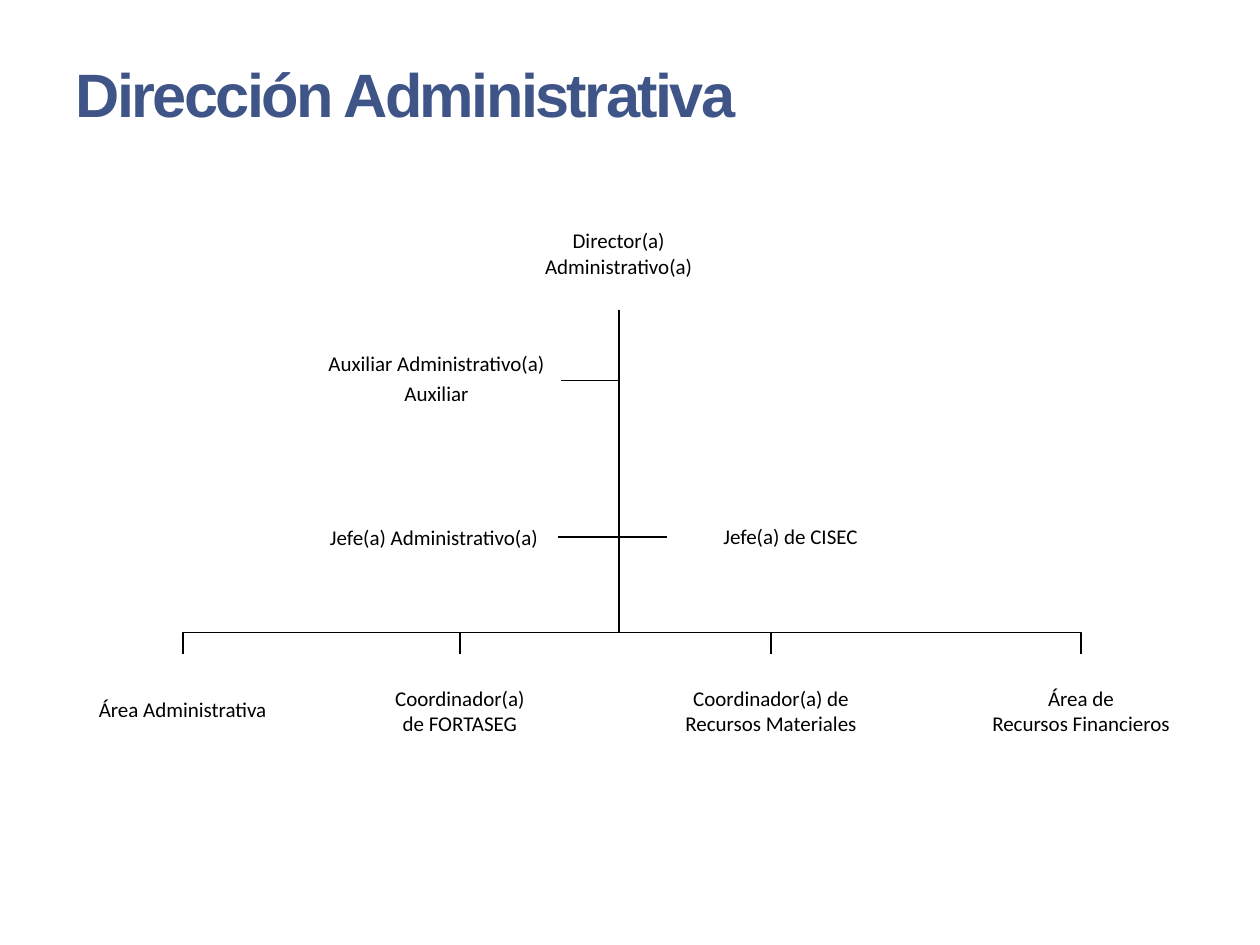
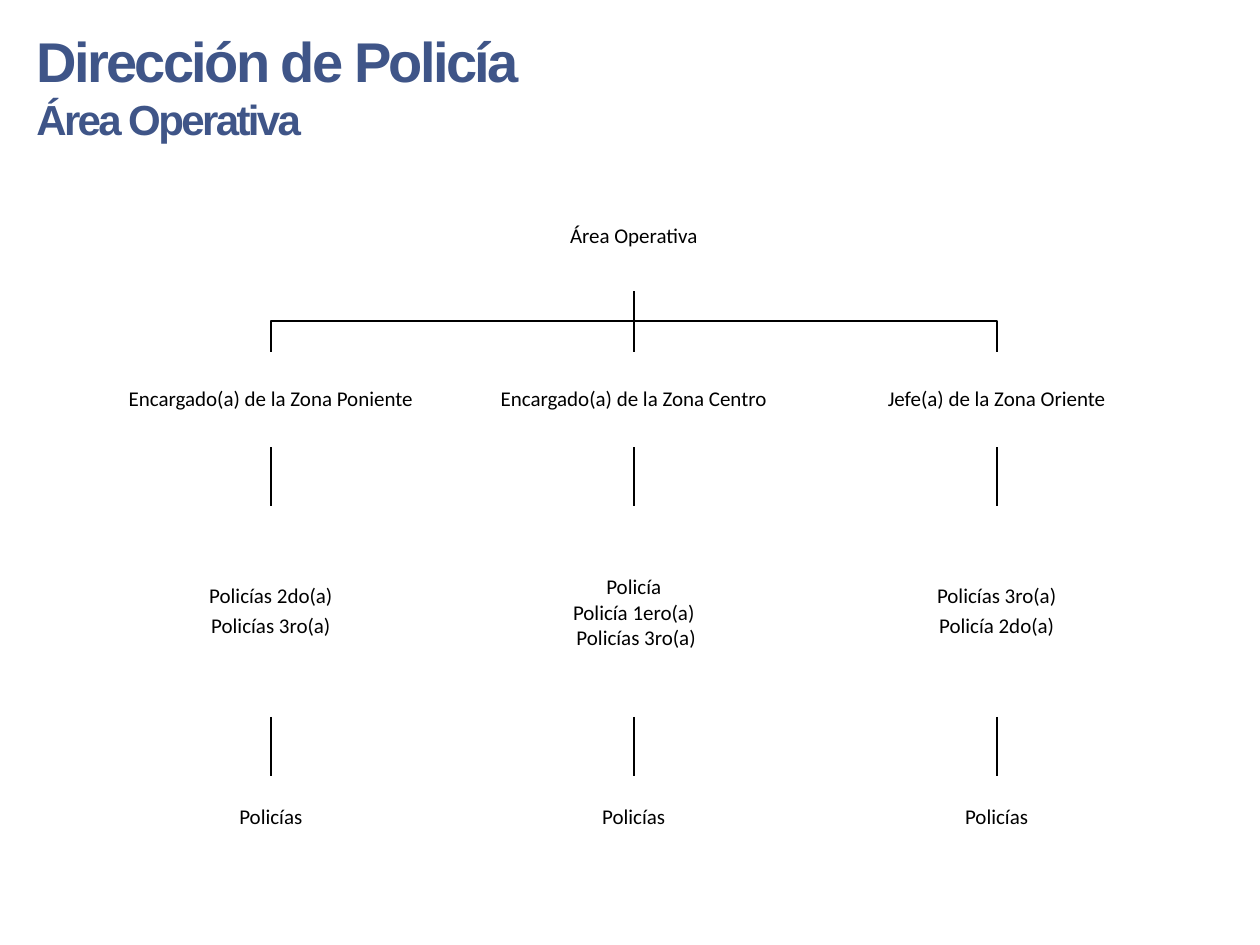
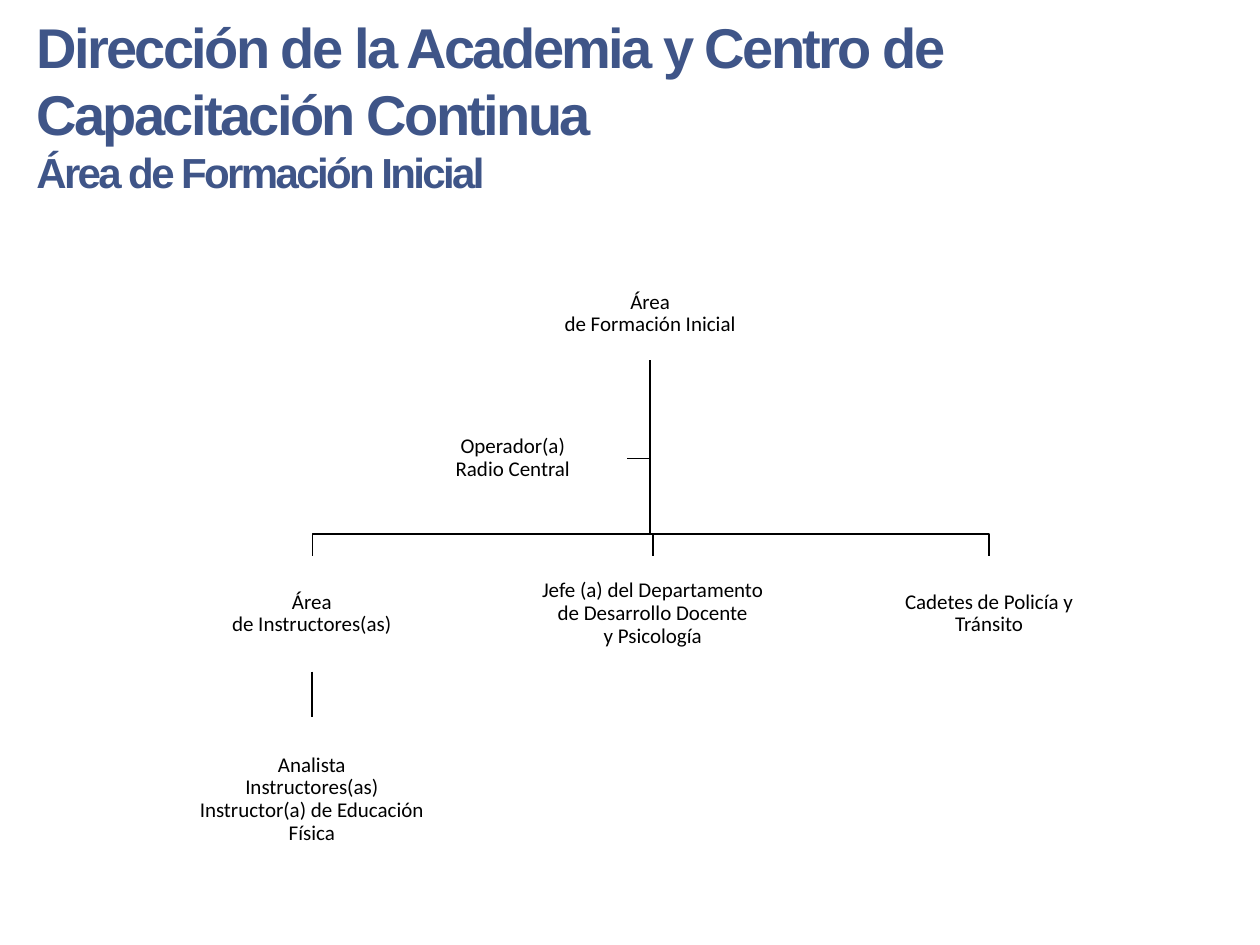
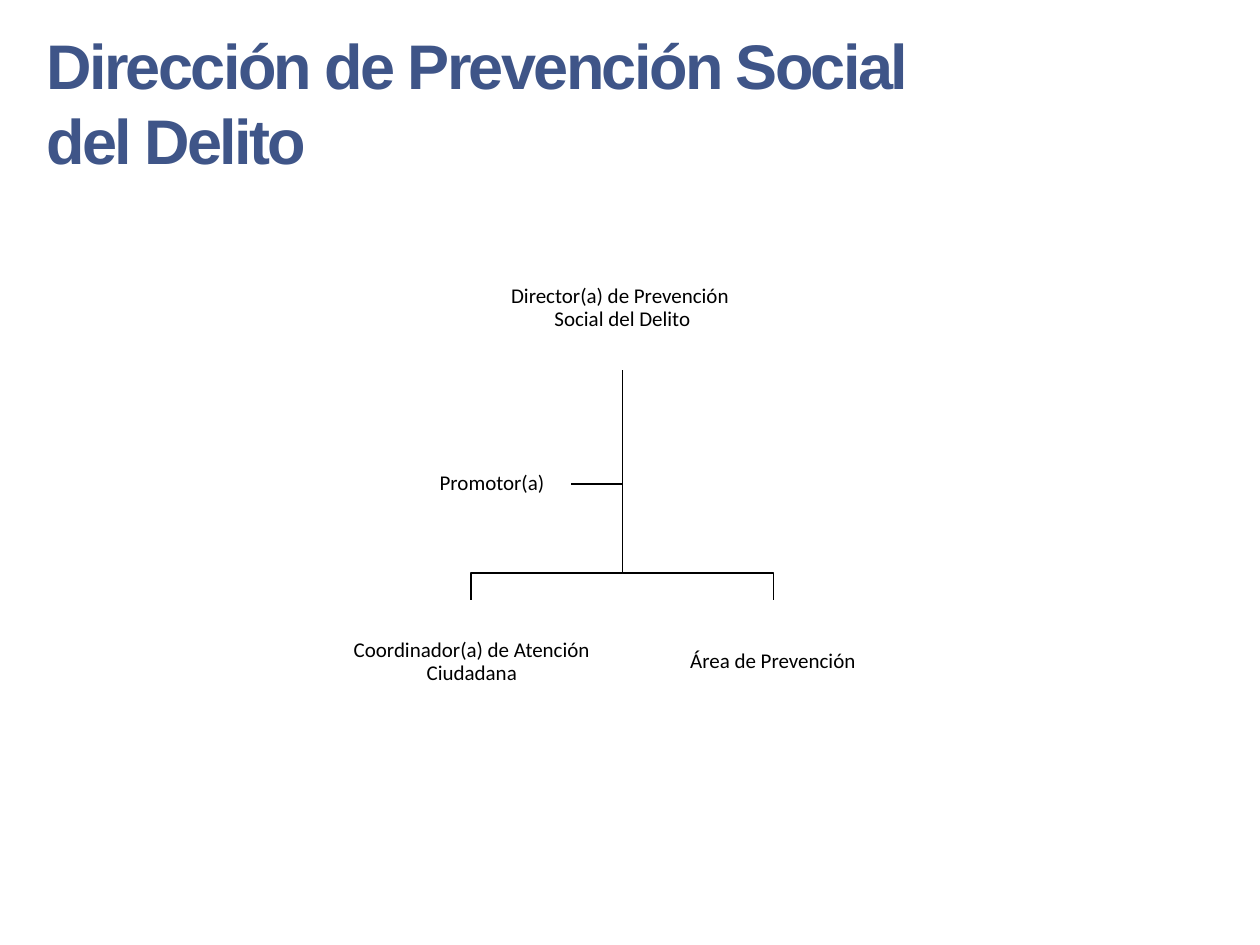
from dataclasses import dataclass
from typing import NamedTuple

import pptx
import pptx.dml.color
import pptx.enum.shapes
import pptx.enum.text
import pptx.oxml
import pptx.oxml.ns
import pptx.util

# Shared scale and style
EMU_PER_PX = 9144  # 100 px to the inch
TITLE_COLOR = "3F5588"
INK = "000000"
WHITE = "FFFFFF"
TITLE_FONT = "Arial"
ROLE_FONT = "Calibri"
TITLE_WIDTH = 746
ROLE_MARGIN = 1
TOP, BOTTOM = 0, 2  # connection sites of a rectangle


class Spacing(NamedTuple):
    line: float
    after: float


PLAIN = Spacing(1.0, 0)
TIGHT = Spacing(0.9, 0)
LOOSE = Spacing(0.9, 4.2)


class Line(NamedTuple):
    text: str
    size: float


@dataclass(frozen=True)
class Role:
    """A box of the chart, with the roles below it and at its sides."""
    lines: tuple[str, ...]
    left: int
    top: int
    width: int
    height: int
    spacing: Spacing = TIGHT
    below: tuple["Role", ...] = ()
    aside: tuple["Role", ...] = ()

    @property
    def center(self) -> float:
        return self.left + self.width / 2

    @property
    def middle(self) -> float:
        return self.top + self.height / 2

    @property
    def bottom(self) -> int:
        return self.top + self.height


@dataclass(frozen=True)
class Chart:
    title: tuple[Line, ...]
    title_left: int
    title_top: int
    title_height: int
    drop: int  # from the horizontal branch line down to the boxes
    root: Role


# Drawing helpers
def px(value: float) -> int:
    return int(value * EMU_PER_PX)


def color(code: str) -> pptx.dml.color.RGBColor:
    return pptx.dml.color.RGBColor.from_string(code)


def write(frame, lines: tuple[Line, ...], *, font: str, ink: str, bold: bool = False,
          centered: bool = False, spacing: Spacing = PLAIN, tracking: int = 0) -> None:
    """Fill a text frame with one paragraph per line; tracking is in 1/100 pt."""
    align = pptx.enum.text.PP_ALIGN
    frame.word_wrap = True
    for index, line in enumerate(lines):
        para = frame.add_paragraph() if index else frame.paragraphs[0]
        para.alignment = align.CENTER if centered else align.LEFT
        para.line_spacing = spacing.line
        para.space_after = pptx.util.Pt(spacing.after)
        span = para.add_run()
        span.text = line.text
        span.font.name = font
        span.font.size = pptx.util.Pt(line.size)
        span.font.bold = bold
        span.font.color.rgb = color(ink)
        if tracking:
            span._r.get_or_add_rPr().set("spc", str(tracking))


def draw_title(page, chart: Chart) -> None:
    box = page.shapes.add_textbox(px(chart.title_left), px(chart.title_top),
                                  px(TITLE_WIDTH), px(chart.title_height))
    box.text_frame.auto_size = pptx.enum.text.MSO_AUTO_SIZE.SHAPE_TO_FIT_TEXT
    write(box.text_frame, chart.title, font=TITLE_FONT, ink=TITLE_COLOR,
          bold=True, tracking=-150)


def draw_box(page, role: Role, filled: bool):
    box = page.shapes.add_shape(pptx.enum.shapes.MSO_SHAPE.RECTANGLE, px(role.left),
                                px(role.top), px(role.width), px(role.height))
    box.shadow.inherit = False
    box.line.fill.background()
    if filled:
        box.fill.solid()
        box.fill.fore_color.rgb = color(WHITE)
    else:
        box.fill.background()
    frame = box.text_frame
    frame.margin_left = frame.margin_right = px(ROLE_MARGIN)
    frame.margin_top = frame.margin_bottom = px(ROLE_MARGIN)
    frame.vertical_anchor = pptx.enum.text.MSO_ANCHOR.MIDDLE
    write(frame, tuple(Line(text, 12) for text in role.lines), font=ROLE_FONT,
          ink=INK, centered=True, spacing=role.spacing)
    return box


def set_stroke(shape) -> None:
    shape.line.color.rgb = color(INK)
    shape.line.width = pptx.util.Pt(1)


def draw_bend(page, points: list[tuple[float, float]]) -> None:
    builder = page.shapes.build_freeform(*points[0], scale=EMU_PER_PX)
    builder.add_line_segments(points[1:], close=False)
    bend = builder.convert_to_shape()
    bend.fill.background()
    bend.shadow.inherit = False
    set_stroke(bend)


def draw_straight(page, upper, lower) -> None:
    link = page.shapes.add_connector(pptx.enum.shapes.MSO_CONNECTOR.STRAIGHT, 0, 0, 0, 0)
    link.begin_connect(upper, BOTTOM)
    link.end_connect(lower, TOP)
    set_stroke(link)
    link._element.spPr.append(pptx.oxml.parse_xml(
        f"<a:effectLst {pptx.oxml.ns.nsdecls('a')}/>"))


def draw_branch(page, role: Role, drop: int, is_root: bool = False):
    """Draw a role and everything that hangs from it."""
    box = draw_box(page, role, filled=not is_root)
    start = (role.center, role.bottom)
    for child in role.aside:
        draw_branch(page, child, drop)
        edge = child.left + child.width if child.center < role.center else child.left
        draw_bend(page, [start, (role.center, child.middle), (edge, child.middle)])
    for child in role.below:
        child_box = draw_branch(page, child, drop)
        if child.center == role.center:
            draw_straight(page, box, child_box)
        else:
            level = child.top - drop
            draw_bend(page, [start, (role.center, level), (child.center, level),
                             (child.center, child.top)])
    return box


# Slide 1: administration
administration = Chart(
    (Line("Dirección Administrativa", 35),), 50, 40, 69, drop=17,
    root=Role(
        ("Director(a)", "Administrativo(a)"), 360, 156, 262, 90, PLAIN,
        below=(
            Role(("Área Administrativa",), 51, 519, 188, 90, LOOSE),
            Role(("Coordinador(a)", "de FORTASEG"), 271, 519, 188, 90, PLAIN),
            Role(("Coordinador(a) de", "Recursos Materiales"), 492, 519, 240, 90, PLAIN),
            Role(("Área de", "Recursos Financieros"), 764, 519, 188, 90, PLAIN),
        ),
        aside=(
            Role(("Jefe(a) Administrativo(a)",), 246, 387, 197, 79, PLAIN),
            Role(("Jefe(a) de CISEC",), 529, 387, 197, 79, LOOSE),
            Role(("Auxiliar Administrativo(a)", "Auxiliar"), 248, 262, 197, 79, LOOSE),
        )))

# Slide 2: police zones, three equal columns
ZONE_LEFT, ZONE_STEP = 101, 288


def zone(column: int, head: str, ranks: tuple[str, ...], spacing: Spacing) -> Role:
    left = ZONE_LEFT + column * ZONE_STEP
    officers = Role(("Policías",), left - 6, 616, 240, 66, LOOSE)
    squad = Role(ranks, left + 10, 402, 208, 167, spacing, below=(officers,))
    return Role((head,), left, 279, 228, 76, LOOSE, below=(squad,))


police = Chart(
    (Line("Dirección de Policía", 32), Line("Área Operativa", 24)), 19, 16, 104, drop=24,
    root=Role(
        ("Área Operativa",), 377, 145, 252, 86, LOOSE,
        below=(
            zone(0, "Encargado(a) de la Zona Poniente",
                 ("Policías 2do(a)", "Policías 3ro(a)"), LOOSE),
            zone(1, "Encargado(a) de la Zona Centro",
                 ("Policía", "Policía 1ero(a)", " Policías 3ro(a)"), PLAIN),
            zone(2, "Jefe(a) de la Zona Oriente",
                 ("Policías 3ro(a)", "Policía 2do(a)"), LOOSE),
        )))

# Slide 3: academy
analysts = Role(("Analista", "Instructores(as)", "Instructor(a) de Educación Física"),
                149, 569, 197, 131)
academy = Chart(
    (Line("Dirección de la Academia y Centro de Capacitación Continua", 32),
     Line("Área de Formación Inicial", 24)), 19, 5, 158, drop=17,
    root=Role(
        ("Área", "de Formación Inicial"), 399, 212, 234, 74,
        below=(
            Role(("Área", "de Instructores(as)"), 149, 441, 197, 92, below=(analysts,)),
            Role(("Jefe (a) del Departamento", "de Desarrollo Docente", "y Psicología"),
                 407, 441, 222, 92),
            Role(("Cadetes de Policía y", "Tránsito"), 674, 441, 222, 92),
        ),
        aside=(Role(("Operador(a)", "Radio Central"), 316, 334, 182, 59),)))

# Slide 4: prevention
prevention = Chart(
    (Line("Dirección de Prevención Social del Delito", 36),), 27, 16, 131, drop=21,
    root=Role(
        ("Director(a) de Prevención ", "Social del Delito"), 357, 195, 274, 99,
        below=(
            Role(("Coordinador(a) de Atención", "Ciudadana"), 276, 476, 197, 99),
            Role(("Área de Prevención",), 515, 476, 197, 99),
        ),
        aside=(Role(("Promotor(a)",), 328, 355, 125, 57),)))


def main() -> None:
    deck = pptx.Presentation()
    deck.slide_width, deck.slide_height = px(1000), px(750)
    blank = deck.slide_layouts[6]
    for chart in (administration, police, academy, prevention):
        page = deck.slides.add_slide(blank)
        draw_title(page, chart)
        draw_branch(page, chart.root, chart.drop, is_root=True)
    deck.save("out.pptx")


if __name__ == "__main__":
    main()
